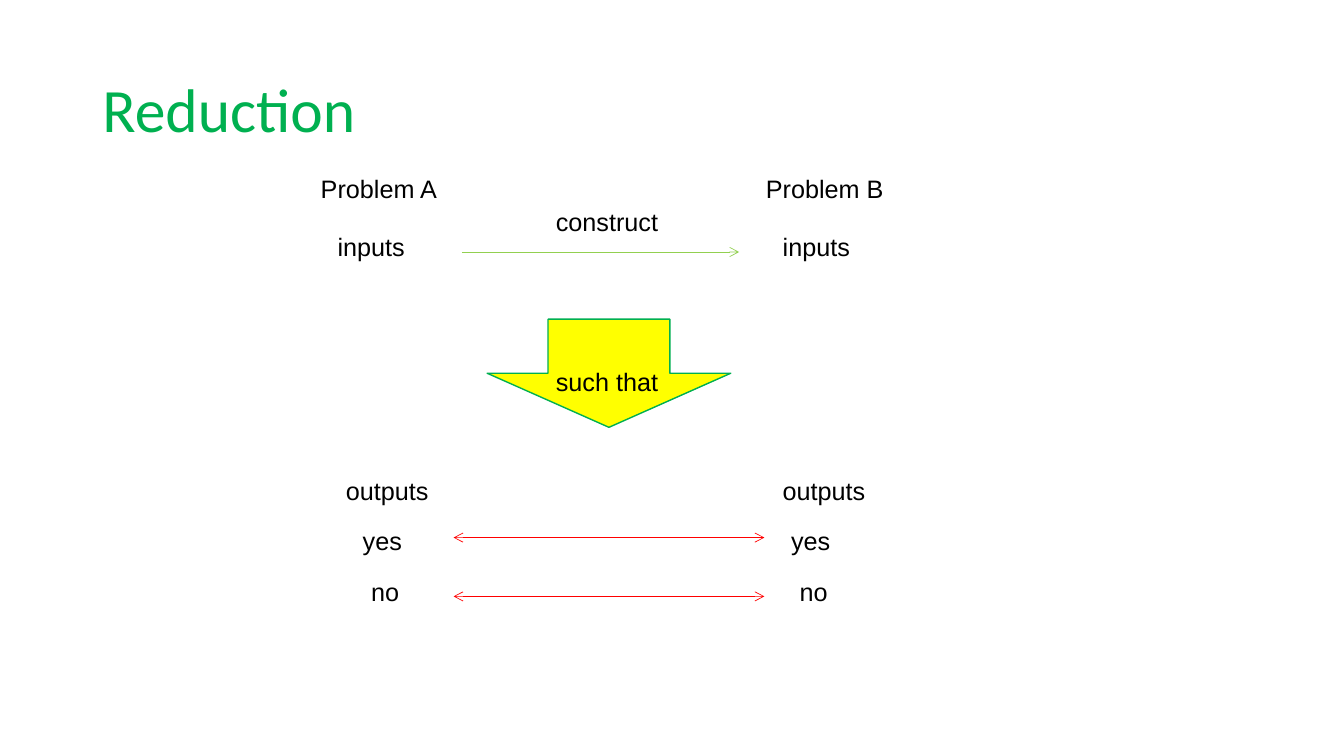
from lxml import etree
from pptx import Presentation
from pptx.dml.color import RGBColor
from pptx.enum.shapes import MSO_CONNECTOR, MSO_SHAPE
from pptx.enum.text import MSO_ANCHOR, MSO_AUTO_SIZE, PP_ALIGN
from pptx.oxml.ns import qn
from pptx.util import Pt

PX = 9525
LINE = MSO_CONNECTOR.STRAIGHT
DOWN = MSO_SHAPE.DOWN_ARROW
MIDDLE = MSO_ANCHOR.MIDDLE
LEFT = PP_ALIGN.LEFT
FIT = MSO_AUTO_SIZE.SHAPE_TO_FIT_TEXT

TITLE = "Reduction"
TITLE_BOX = (88, 38, 1104, 139)
GREEN, LIME, YELLOW, RED, BLACK = "00B050", "92D050", "FFFF00", "FF0000", "000000"
TEXT_H = 38
PAIRS = [
    ("Problem A", "Problem B", 296, 720, 160, 132),
    ("inputs", "inputs", 312, 736, 216, 84),
    ("outputs", "outputs", 320, 736, 448, 99),
    ("yes", "yes", 336, 744, 496, 58),
    ("no", "no", 344, 752, 544, 46),
]
STEPS = [("construct", 192), ("such that", 344)]
STEP_X, STEP_W = 520, 118
BLOCK = (464, 304, 232, 103)
ARROWS = [
    (440, 704, 240, LIME, ["tailEnd"]),
    (432, 728, 512, RED, ["headEnd", "tailEnd"]),
    (432, 728, 568, RED, ["headEnd", "tailEnd"]),
]


def emu(*nums):
    return [n * PX for n in nums]


def color(code):
    return RGBColor.from_string(code)


def style(para, font, size, code):
    para.font.name = font
    para.font.size = Pt(size)
    para.font.color.rgb = color(code)
    para.alignment = LEFT


def label(slide, text, x, y, w):
    frame = slide.shapes.add_textbox(*emu(x, y, w, TEXT_H)).text_frame
    frame.word_wrap = False
    frame.auto_size = FIT
    frame.text = text
    style(frame.paragraphs[0], "Arial", 18, BLACK)


def arrow(slide, x1, x2, y, code, ends):
    line = slide.shapes.add_connector(LINE, *emu(x1, y, x2, y))
    line.line.color.rgb = color(code)
    line.line.width = Pt(0.5)
    props = line._element.spPr
    for end in ends:
        etree.SubElement(props.find(qn("a:ln")), qn("a:" + end), type="arrow")
    etree.SubElement(props, qn("a:effectLst"))


def main():
    deck = Presentation()
    deck.slide_width, deck.slide_height = emu(1280, 720)
    slide = deck.slides.add_slide(deck.slide_layouts[5])

    title = slide.shapes.title
    title.left, title.top, title.width, title.height = emu(*TITLE_BOX)
    frame = title.text_frame
    frame.text = TITLE
    frame.vertical_anchor = MIDDLE
    para = frame.paragraphs[0]
    para.line_spacing = 0.9
    style(para, "Calibri", 44, GREEN)

    block = slide.shapes.add_shape(DOWN, *emu(*BLOCK))
    block.shadow.inherit = False
    block.fill.solid()
    block.fill.fore_color.rgb = color(YELLOW)
    block.line.color.rgb = color(GREEN)
    block.line.width = Pt(1)

    for a, b, ax, bx, y, w in PAIRS:
        label(slide, a, ax, y, w)
        label(slide, b, bx, y, w)
    for text, y in STEPS:
        label(slide, text, STEP_X, y, STEP_W)
    for item in ARROWS:
        arrow(slide, *item)

    deck.save("out.pptx")


if __name__ == "__main__":
    main()
